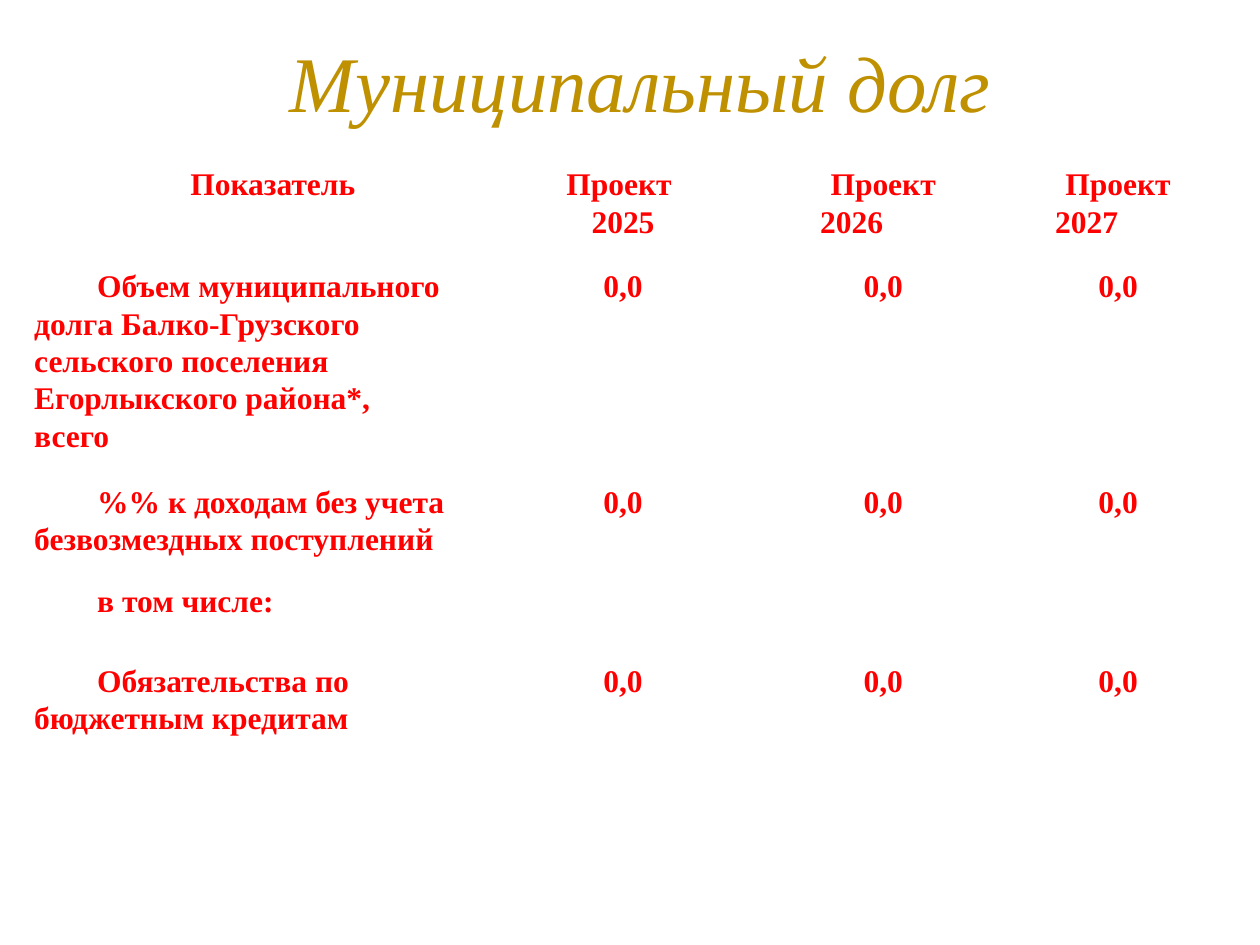
from lxml.etree import SubElement
from pptx import Presentation
from pptx.dml.color import RGBColor
from pptx.enum.text import MSO_ANCHOR, PP_ALIGN
from pptx.oxml.ns import qn
from pptx.util import Cm, Pt

FONT = "Times New Roman"
GOLD = RGBColor(0xBF, 0x90, 0x00)
RED = RGBColor(0xFF, 0x00, 0x00)
WHITE = RGBColor(0xFF, 0xFF, 0xFF)

HEADING = "Муниципальный долг"
ZEROS = ("0,0", "0,0", "0,0")
DEBT_ROWS = [
    ("Показатель", "Проект \n2025", "Проект 2026", "Проект 2027"),
    ("Объем муниципального долга Балко-Грузского сельского поселения "
     "Егорлыкского района*, всего", *ZEROS),
    ("%% к доходам без учета безвозмездных поступлений", *ZEROS),
    ("в том числе:", "", "", ""),
    ("Обязательства по бюджетным кредитам", *ZEROS),
]
COLUMN_WIDTHS = [8.71, 5.41, 5.08, 4.39]
ROW_HEIGHTS = [2.06, 4.34, 2.01, 1.6, 2.13]


def style_font(font, size, color):
    font.name = FONT
    font.size = Pt(size)
    font.color.rgb = color


def add_borders(cell, bottom_width):
    properties = cell._tc.get_or_add_tcPr()
    for side, width in (("L", 1), ("R", 1), ("T", 1), ("B", bottom_width)):
        line = SubElement(properties, qn(f"a:ln{side}"), w=str(Pt(width)))
        fill = SubElement(line, qn("a:solidFill"))
        SubElement(fill, qn("a:srgbClr"), val=str(WHITE))


def fill_cell(cell, text, centred, bottom_width):
    cell.margin_left = cell.margin_right = Cm(0.18)
    cell.margin_top = cell.margin_bottom = 0
    add_borders(cell, bottom_width)
    cell.fill.background()
    cell.text_frame.text = text
    for paragraph in cell.text_frame.paragraphs:
        paragraph.alignment = PP_ALIGN.CENTER if centred else PP_ALIGN.LEFT
        paragraph.line_spacing = 1.07
        paragraph._p.get_or_add_pPr().set("indent", str(Cm(1.27)))
        for run in paragraph.runs:
            style_font(run.font, 18, RED)
            run.font.bold = True


def main():
    presentation = Presentation()
    presentation.slide_width, presentation.slide_height = Cm(25.4), Cm(19.05)
    slide = presentation.slides.add_slide(presentation.slide_layouts[5])

    title = slide.shapes.title
    title.left, title.top, title.width, title.height = Cm(1.7), Cm(0.53), Cm(22.4), Cm(2.21)
    title.text_frame.text = HEADING
    title.text_frame.vertical_anchor = MSO_ANCHOR.BOTTOM
    heading = title.text_frame.paragraphs[0]
    heading.alignment = PP_ALIGN.CENTER
    heading.line_spacing = 0.9
    style_font(heading.runs[0].font, 45, GOLD)
    heading.runs[0].font.italic = True

    debt = slide.shapes.add_table(
        len(ROW_HEIGHTS), len(COLUMN_WIDTHS), Cm(0.51), Cm(3.33),
        Cm(sum(COLUMN_WIDTHS)), Cm(sum(ROW_HEIGHTS))).table
    for column, width in zip(debt.columns, COLUMN_WIDTHS):
        column.width = Cm(width)
    for r, (row, height, texts) in enumerate(zip(debt.rows, ROW_HEIGHTS, DEBT_ROWS)):
        row.height = Cm(height)
        for c, text in enumerate(texts):
            fill_cell(debt.cell(r, c), text, r == 0 or c > 0, 3 if r == 0 else 1)

    presentation.save("out.pptx")


if __name__ == "__main__":
    main()
